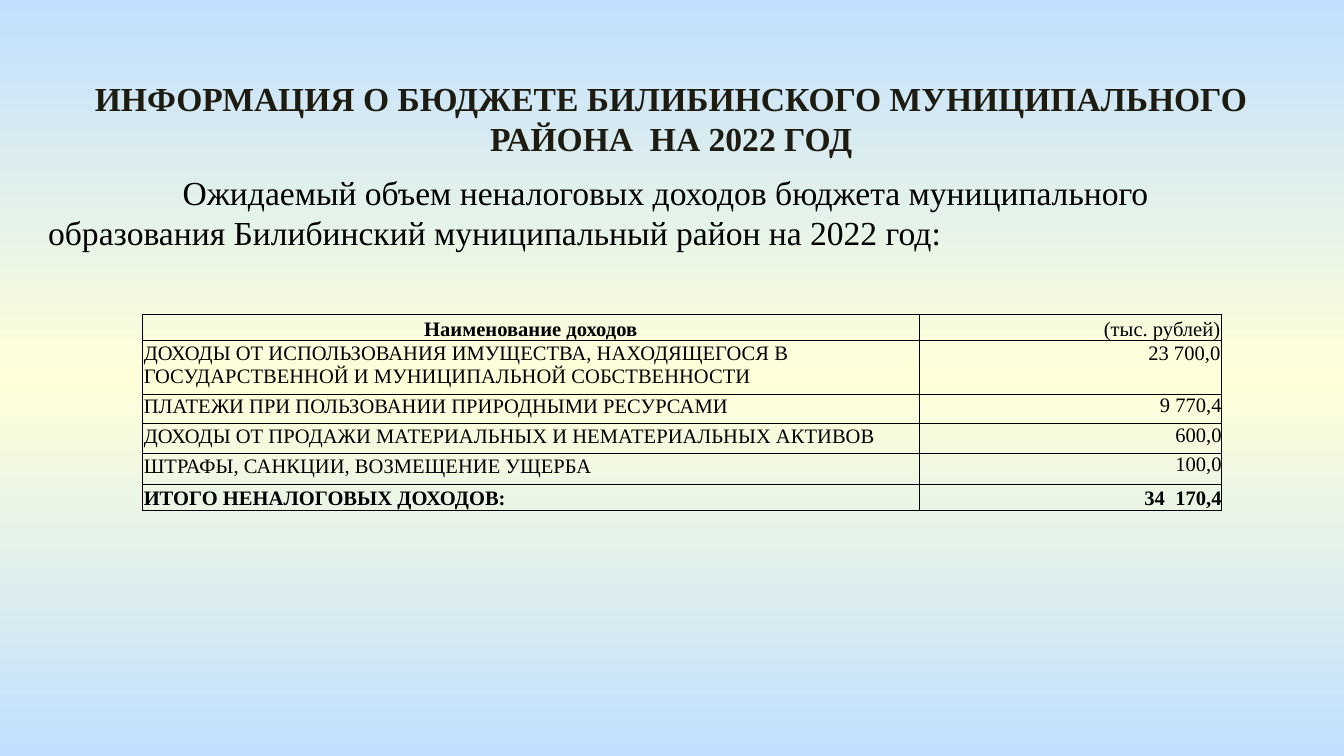
from copy import deepcopy
from dataclasses import dataclass

from lxml.etree import SubElement
from pptx import Presentation
from pptx.dml.color import RGBColor
from pptx.enum.text import MSO_ANCHOR, MSO_AUTO_SIZE, PP_ALIGN
from pptx.oxml.ns import qn
from pptx.util import Inches, Pt


@dataclass(frozen=True)
class Theme:
    font: str = "Times New Roman"
    tab_font: str = "Calibri"
    ink: str = "000000"
    title_ink: str = "1E1C11"
    edge: str = "C1E0FF"
    middle: str = "FFFFD9"
    heading_size: float = 18
    table_size: float = 11
    border_width: float = 0.5


class BudgetSlide:
    """Draws styled elements on one slide."""

    def __init__(self, slide, theme):
        self.slide = slide
        self.theme = theme

    def background(self):
        fill = self.slide.background.fill
        fill.gradient()
        fill.gradient_angle = 270
        first, last = fill.gradient_stops
        for stop in (first, last):
            stop.color.rgb = RGBColor.from_string(self.theme.edge)
        first.position, last.position = 0, 1
        stops = next(self.slide.element.iter(qn("a:gsLst")))
        stops.insert(1, deepcopy(stops[0]))
        center = fill.gradient_stops[1]
        center.position = 0.5
        center.color.rgb = RGBColor.from_string(self.theme.middle)

    def run(self, paragraph, text, size, color=None, bold=False, font=None):
        run = paragraph.add_run()
        run.text = text
        formats = {"size": Pt(size), "bold": bold, "name": font or self.theme.font}
        for name, value in formats.items():
            setattr(run.font, name, value)
        run.font.color.rgb = RGBColor.from_string(color or self.theme.ink)

    def text_box(self, box, align=PP_ALIGN.LEFT):
        shape = self.slide.shapes.add_textbox(*map(Inches, box))
        shape.text_frame.word_wrap = True
        shape.text_frame.auto_size = MSO_AUTO_SIZE.SHAPE_TO_FIT_TEXT
        paragraph = shape.text_frame.paragraphs[0]
        paragraph.alignment = align
        return paragraph

    def tab_stop(self, paragraph, position):
        stops = SubElement(paragraph._p.get_or_add_pPr(), qn("a:tabLst"))
        SubElement(stops, qn("a:tab"), pos=str(Inches(position)), algn="l")

    def borders(self, cell):
        properties = cell._tc.get_or_add_tcPr()
        for index, side in enumerate(("lnL", "lnR", "lnT", "lnB")):
            line = SubElement(properties, qn(f"a:{side}"), w=str(Pt(self.theme.border_width)))
            fill = SubElement(line, qn("a:solidFill"))
            SubElement(fill, qn("a:srgbClr"), val=self.theme.ink)
            properties.insert(index, line)

    def cell(self, cell, text, align, bold, anchor, inset):
        formats = {
            "margin_left": Inches(inset),
            "margin_right": Inches(inset),
            "margin_top": Inches(inset),
            "margin_bottom": 0,
            "vertical_anchor": anchor,
        }
        for name, value in formats.items():
            setattr(cell, name, value)
        cell.fill.background()
        self.borders(cell)
        paragraph = cell.text_frame.paragraphs[0]
        paragraph.alignment = align
        self.run(paragraph, text, self.theme.table_size, bold=bold)

    def table(self, box, widths, heights, rows):
        shape = self.slide.shapes.add_table(len(rows), len(widths), *map(Inches, box))
        table = shape.table
        table.first_row = table.horz_banding = False
        for column, width in zip(table.columns, widths):
            column.width = Inches(width)
        for row, height in zip(table.rows, heights):
            row.height = Inches(height)
        last = len(rows) - 1
        for index, (name, amount) in enumerate(rows):
            anchor = MSO_ANCHOR.BOTTOM if index in (0, last) else MSO_ANCHOR.TOP
            align = PP_ALIGN.CENTER if index == 0 else PP_ALIGN.LEFT
            inset = 0.01 if index < 2 else 0
            self.cell(table.cell(index, 0), name, align, index in (0, last), anchor, 0.01)
            self.cell(table.cell(index, 1), amount, PP_ALIGN.RIGHT, index == last, anchor, inset)


REVENUES = [
    ("Наименование доходов", "(тыс. рублей)"),
    ("ДОХОДЫ ОТ ИСПОЛЬЗОВАНИЯ ИМУЩЕСТВА, НАХОДЯЩЕГОСЯ В "
     "ГОСУДАРСТВЕННОЙ И МУНИЦИПАЛЬНОЙ СОБСТВЕННОСТИ", "23 700,0"),
    ("ПЛАТЕЖИ ПРИ ПОЛЬЗОВАНИИ ПРИРОДНЫМИ РЕСУРСАМИ", "9 770,4"),
    ("ДОХОДЫ ОТ ПРОДАЖИ МАТЕРИАЛЬНЫХ И НЕМАТЕРИАЛЬНЫХ АКТИВОВ", "600,0"),
    ("ШТРАФЫ, САНКЦИИ, ВОЗМЕЩЕНИЕ УЩЕРБА", "100,0"),
    ("ИТОГО НЕНАЛОГОВЫХ ДОХОДОВ:", "34  170,4"),
]


def main():
    presentation = Presentation()
    presentation.slide_width = Inches(10)
    presentation.slide_height = Inches(10 * 9 / 16)
    theme = Theme()
    budget = BudgetSlide(presentation.slides.add_slide(presentation.slide_layouts[6]), theme)
    budget.background()

    title = budget.text_box((0.39, 0.53, 9.21, 0.71), PP_ALIGN.CENTER)
    budget.run(title, "ИНФОРМАЦИЯ О БЮДЖЕТЕ БИЛИБИНСКОГО МУНИЦИПАЛЬНОГО РАЙОНА  НА 2022 ГОД",
               theme.heading_size, theme.title_ink, bold=True)

    introduction = budget.text_box((0.26, 1.23, 9.49, 0.71))
    budget.tab_stop(introduction, 1)
    budget.run(introduction, "\t", theme.heading_size, font=theme.tab_font)
    budget.run(introduction, "Ожидаемый объем неналоговых доходов бюджета муниципального "
               "образования Билибинский муниципальный район на 2022 год:", theme.heading_size)

    budget.table((1.06, 2.34, 8.03, 1.45), (5.78, 2.25),
                 (0.19, 0.4, 0.22, 0.22, 0.23, 0.19), REVENUES)
    presentation.save("out.pptx")


if __name__ == "__main__":
    main()
